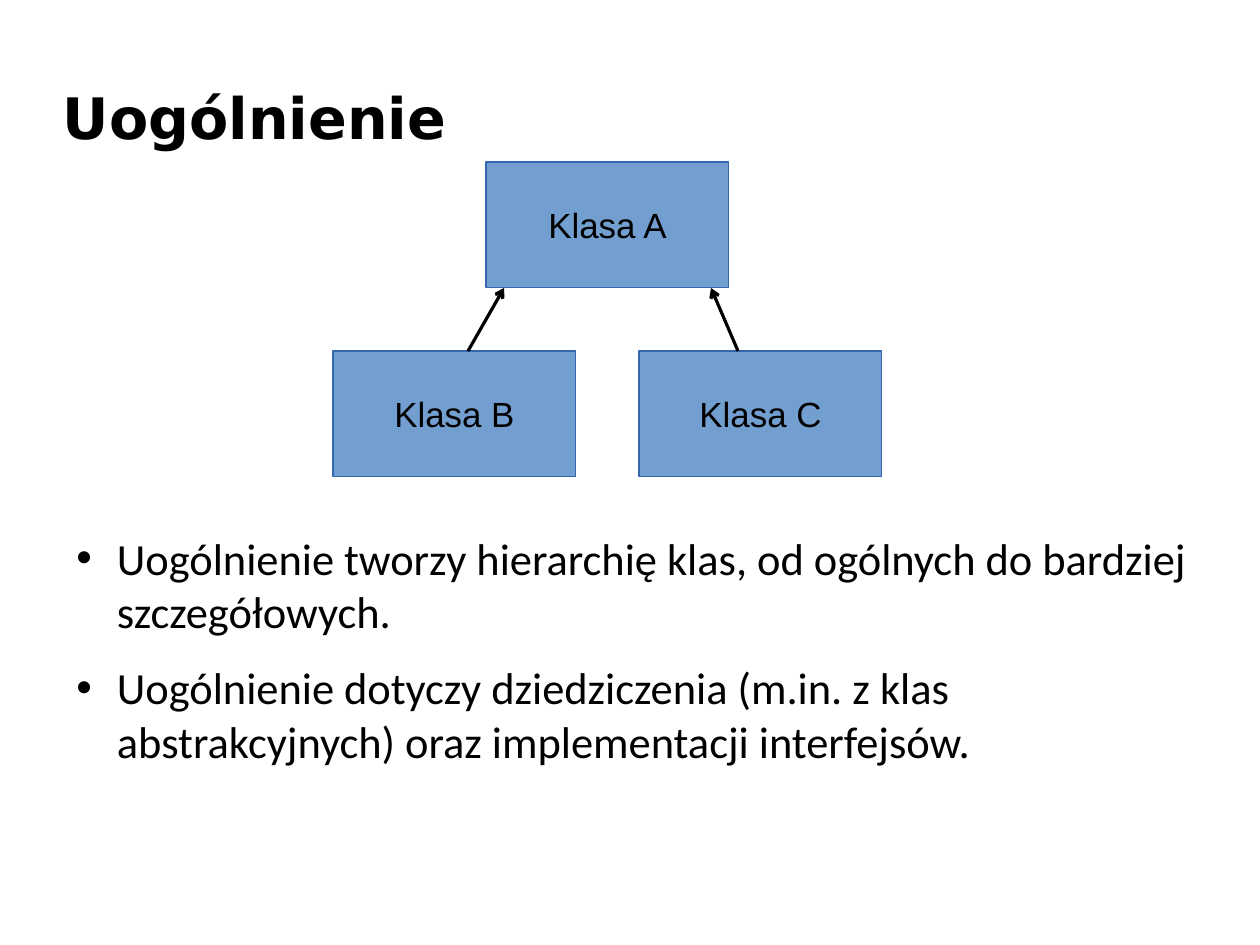
import pptx
import pptx.dml.color
import pptx.enum.shapes
import pptx.enum.text
import pptx.oxml.ns
import pptx.util
from lxml import etree

Cm, Pt, qn = pptx.util.Cm, pptx.util.Pt, pptx.oxml.ns.qn
ANCHOR = pptx.enum.text.MSO_ANCHOR
ALIGN = pptx.enum.text.PP_ALIGN

COLORS = {"text": "000000", "fill": "729FCF", "border": "3465AF"}
BULLETS = [
    "Uogólnienie tworzy hierarchię klas, od ogólnych do bardziej szczegółowych.",
    "Uogólnienie dotyczy dziedziczenia (m.in. z klas abstrakcyjnych) "
    "oraz implementacji interfejsów.",
]


def rgb(name):
    return pptx.dml.color.RGBColor.from_string(COLORS[name])


def add_text(p, text, font="Arial", size=22, bold=False, color="text", align=ALIGN.LEFT):
    p.alignment = align
    r = p.add_run()
    r.text = text
    r.font.name, r.font.size, r.font.bold = font, Pt(size), bold
    r.font.color.rgb = rgb(color)


def add_frame(s, x, y, w, h, anchor):
    tf = s.shapes.add_textbox(Cm(x), Cm(y), Cm(w), Cm(h)).text_frame
    tf.word_wrap = True
    tf.vertical_anchor = anchor
    tf.margin_left = tf.margin_right = tf.margin_top = tf.margin_bottom = 0
    return tf


def add_title(s, x, y, w, h):
    tf = add_frame(s, x, y, w, h, ANCHOR.MIDDLE)
    add_text(tf.paragraphs[0], "Uogólnienie", font="DejaVu Sans", size=36, bold=True)


def add_bullets(s, x, y, w, h):
    tf = add_frame(s, x, y, w, h, ANCHOR.TOP)
    for i, text in enumerate(BULLETS):
        p = tf.add_paragraph() if i else tf.paragraphs[0]
        pPr = p._p.get_or_add_pPr()
        pPr.set("marL", str(Cm(1.2)))
        pPr.set("indent", str(Cm(-0.9)))
        etree.SubElement(pPr, qn("a:buFont")).set("typeface", "Arial")
        etree.SubElement(pPr, qn("a:buChar")).set("char", "•")
        p.space_after = Pt(14.2)
        add_text(p, text, font="Calibri", size=28)


def add_class(s, text, x, y, w, h):
    sp = s.shapes.add_shape(pptx.enum.shapes.MSO_SHAPE.RECTANGLE, Cm(x), Cm(y), Cm(w), Cm(h))
    sp.shadow.inherit = False
    sp.fill.solid()
    sp.fill.fore_color.rgb = rgb("fill")
    sp.line.color.rgb = rgb("border")
    sp.line.width = Pt(0)
    tf = sp.text_frame
    tf.word_wrap = False
    tf.vertical_anchor = ANCHOR.MIDDLE
    add_text(tf.paragraphs[0], text, align=ALIGN.CENTER)


def add_arrow(s, x1, y1, x2, y2):
    line = s.shapes.add_connector(
        pptx.enum.shapes.MSO_CONNECTOR.STRAIGHT, Cm(x1), Cm(y1), Cm(x2), Cm(y2))
    line.line.color.rgb = rgb("text")
    line.line.width = Pt(0)
    etree.SubElement(line.line._get_or_add_ln(), qn("a:tailEnd")).set("type", "arrow")
    etree.SubElement(line._element.spPr, qn("a:effectLst"))


def add_hierarchy(s, x, y, w, h):
    # One parent centred above two children, with equal gaps both ways
    gap = 1.4
    bw, bh = (w - gap) / 2, (h - gap) / 2
    parent_x, right_x, child_y = x + (w - bw) / 2, x + bw + gap, y + bh + gap
    add_class(s, "Klasa B", x, child_y, bw, bh)
    add_class(s, "Klasa A", parent_x, y, bw, bh)
    add_class(s, "Klasa C", right_x, child_y, bw, bh)

    # Arrows from the children to the lower corners of the parent
    inset = 0.4
    add_arrow(s, x + 3, child_y, parent_x + inset, y + bh)
    add_arrow(s, right_x + 2.2, child_y, parent_x + bw - inset, y + bh)


def main():
    prs = pptx.Presentation()
    prs.slide_width, prs.slide_height = Cm(28), Cm(21)
    s = prs.slides.add_slide(prs.slide_layouts[6])
    add_title(s, 1.4, 0.84, 25.2, 3.5)
    add_bullets(s, 1.4, 11.8, 25.2, 8.2)
    add_hierarchy(s, 7.4, 3.6, 12.2, 7)
    prs.save("out.pptx")


if __name__ == "__main__":
    main()
